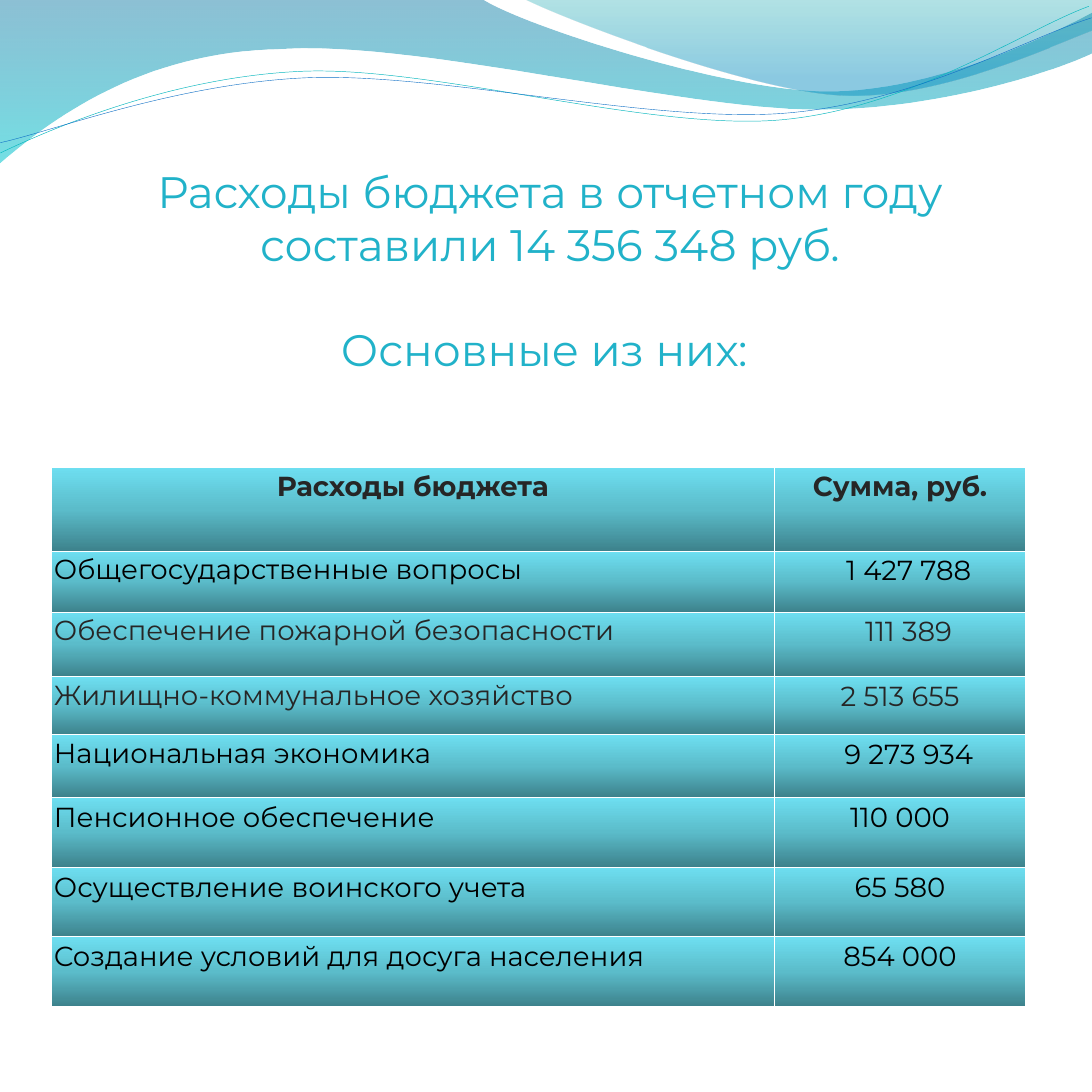
"""Build the budget expenses slide: wave header, title and table of sums."""
from lxml.etree import SubElement
from pptx import Presentation
from pptx.dml.color import RGBColor
from pptx.enum.text import PP_ALIGN
from pptx.oxml.ns import qn
from pptx.util import Inches, Pt

SIDE = Inches(27.56)
FONT = "Montserrat"
TITLE_COLOR = RGBColor(0x21, 0xB2, 0xC9)
BLACK = RGBColor(0, 0, 0)
CHARCOAL = RGBColor(0x26, 0x26, 0x26)
WHITE = RGBColor(0xFF, 0xFF, 0xFF)
TEAL_LINE = RGBColor(0x0A, 0xB8, 0xBF)
BLUE_LINE = RGBColor(0x0F, 0x6F, 0xC6)
CELL_STOPS = [
    (0, RGBColor(0x3D, 0x82, 0x8C), 100),
    (50, RGBColor(0x5B, 0xBC, 0xCA), 100),
    (100, RGBColor(0x6E, 0xDF, 0xF1), 100),
]
BACK_WAVE_STOPS = [(0, RGBColor(0, 0x74, 0xA1), 45), (100, RGBColor(0, 0xC6, 0xCF), 55)]
FRONT_WAVE_STOPS = [(0, RGBColor(0, 0xA1, 0xA9), 30), (80, RGBColor(0, 0x8B, 0xBF), 45)]


def paint_gradient(fill, properties, stops, angle):
    """Fill with (position, colour, opacity) stops at a clockwise angle."""
    fill.gradient()
    gradient = properties.find(qn("a:gradFill"))
    gradient.clear()
    stop_list = SubElement(gradient, qn("a:gsLst"))
    for position, color, opacity in stops:
        stop = SubElement(stop_list, qn("a:gs"), pos=str(position * 1000))
        tint = SubElement(stop, qn("a:srgbClr"), val=str(color))
        if opacity < 100:
            SubElement(tint, qn("a:alpha"), val=str(opacity * 1000))
    SubElement(gradient, qn("a:lin"), ang=str(angle * 60000), scaled="0")


def draw_outline(segments, close):
    """Draw an outline of line ends (2 numbers) and cubic curves (6 numbers)."""
    anchors = [(Inches(segment[-2]), Inches(segment[-1])) for segment in segments]
    builder = slide.shapes.build_freeform(*anchors[0])
    builder.add_line_segments(anchors[1:], close=close)
    shape = builder.convert_to_shape()
    steps = list(shape._element.iter(qn("a:lnTo")))
    for step, segment in zip(steps, segments[1:]):
        if len(segment) == 6:
            step.tag = qn("a:cubicBezTo")
            step.clear()
            for x, y in zip(segment[::2], segment[1::2]):
                SubElement(
                    step, qn("a:pt"),
                    x=str(Inches(x) - shape.left), y=str(Inches(y) - shape.top),
                )
    shape.shadow.inherit = False
    return shape


presentation = Presentation()
presentation.slide_width = presentation.slide_height = SIDE
slide = presentation.slides.add_slide(presentation.slide_layouts[6])

back_wave = [
    (0, -0.02), (12.14, -0.03),
    (13.11, 0.62, 18.29, 2.31, 20.9, 2.31), (23.51, 2.31, 26.41, 0.94, 27.56, 0.32),
    (27.59, 1.33),
    (27.1, 1.61, 23.97, 2.78, 20.56, 2.77), (17.14, 2.76, 10.52, 1.02, 7.09, 1.25),
    (3.56, 1.3, 1.26, 3.05, -0.03, 4.16),
]
front_wave = [
    (13.21, -0.03),
    (14.04, 0.41, 18.8, 2.27, 21.19, 2.4), (23.58, 2.54, 26.5, 1.17, 27.56, 0.77),
    (27.56, 0),
]
teal_curve = [
    (0.01, 3.86), (1.33, 3.23, 4.34, 1.94, 7.62, 1.8),
    (10.89, 1.66, 16.35, 3.3, 19.66, 3.03), (22.97, 2.75, 25.86, 0.75, 27.48, 0.16),
]
blue_curve = [
    (0.01, 3.6), (1.31, 3.32, 4.5, 2.09, 7.8, 1.96),
    (11.09, 1.84, 16.48, 3.11, 19.77, 2.86), (23.06, 2.61, 25.93, 0.95, 27.55, 0.45),
]
for segments, stops in [(back_wave, BACK_WAVE_STOPS), (front_wave, FRONT_WAVE_STOPS)]:
    wave = draw_outline(segments, close=True)
    paint_gradient(wave.fill, wave._element.spPr, stops, 90)
    wave.line.fill.background()
for segments, color, width in [(teal_curve, TEAL_LINE, 0.85), (blue_curve, BLUE_LINE, 0.75)]:
    curve = draw_outline(segments, close=False)
    curve.fill.background()
    curve.line.color.rgb = color
    curve.line.width = Pt(width)

title = slide.shapes.add_textbox(Inches(3.27), Inches(4.1), Inches(21.23), Inches(5.49))
title_frame = title.text_frame
title_frame.word_wrap = True
title_frame.text = "Расходы бюджета в отчетном году составили 14 356 348 руб.\nОсновные из них: "
for paragraph in title_frame.paragraphs:
    paragraph.alignment = PP_ALIGN.CENTER
    paragraph.font.name = FONT
    paragraph.font.size = Pt(80)
    paragraph.font.color.rgb = TITLE_COLOR
title_frame.paragraphs[1].space_before = Pt(96)

expenses = [
    (2.12, CHARCOAL, ("Расходы бюджета", 0.07, 0), ("Сумма, руб.", 0.07, 0)),
    (1.53, BLACK, ("Общегосударственные вопросы", 0.04, 0.07), ("1 427 788", 0.08, 0.44)),
    (1.63, CHARCOAL, ("Обеспечение пожарной безопасности", 0.06, 0.07), ("111 389", 0.08, 0.43)),
    (1.47, CHARCOAL, ("Жилищно-коммунальное хозяйство", 0.06, 0.07), ("2 513 655", 0.08, 0)),
    (1.58, BLACK, ("Национальная экономика", 0.05, 0.07), ("9 273 934", 0.09, 0.44)),
    (1.76, BLACK, ("Пенсионное обеспечение", 0.09, 0.07), ("110 000", 0.09, 0)),
    (1.76, BLACK, ("Осуществление воинского учета", 0.09, 0.07), ("65 580", 0.09, 0)),
    (1.76, BLACK, ("Создание условий для досуга населения", 0.09, 0.07), ("854 000", 0.09, 0)),
]
table = slide.shapes.add_table(
    len(expenses), 2, Inches(1.29), Inches(11.79), Inches(24.59), Inches(13.61)
).table
table.horz_banding = False
table.columns[0].width = Inches(18.26)
table.columns[1].width = Inches(6.33)

for row, (height, color, *entries) in enumerate(expenses):
    table.rows[row].height = Inches(height)
    for column, (text, top_margin, indent) in enumerate(entries):
        cell = table.cell(row, column)
        cell.text = text
        cell.margin_left = cell.margin_right = cell.margin_bottom = 0
        cell.margin_top = Inches(top_margin)
        paragraph = cell.text_frame.paragraphs[0]
        paragraph._p.get_or_add_pPr().set("marL", str(Inches(indent)))
        paragraph.alignment = PP_ALIGN.CENTER if row == 0 or column == 1 else PP_ALIGN.LEFT
        paragraph.font.name = FONT
        paragraph.font.size = Pt(50)
        paragraph.font.bold = row == 0
        paragraph.font.color.rgb = color
        properties = cell._tc.get_or_add_tcPr()
        for edge in ("lnL", "lnR", "lnT", "lnB"):
            border = SubElement(properties, qn(f"a:{edge}"), w=str(Pt(1)))
            solid = SubElement(border, qn("a:solidFill"))
            SubElement(solid, qn("a:srgbClr"), val=str(WHITE))
        paint_gradient(cell.fill, properties, CELL_STOPS, 270)

presentation.save("out.pptx")
